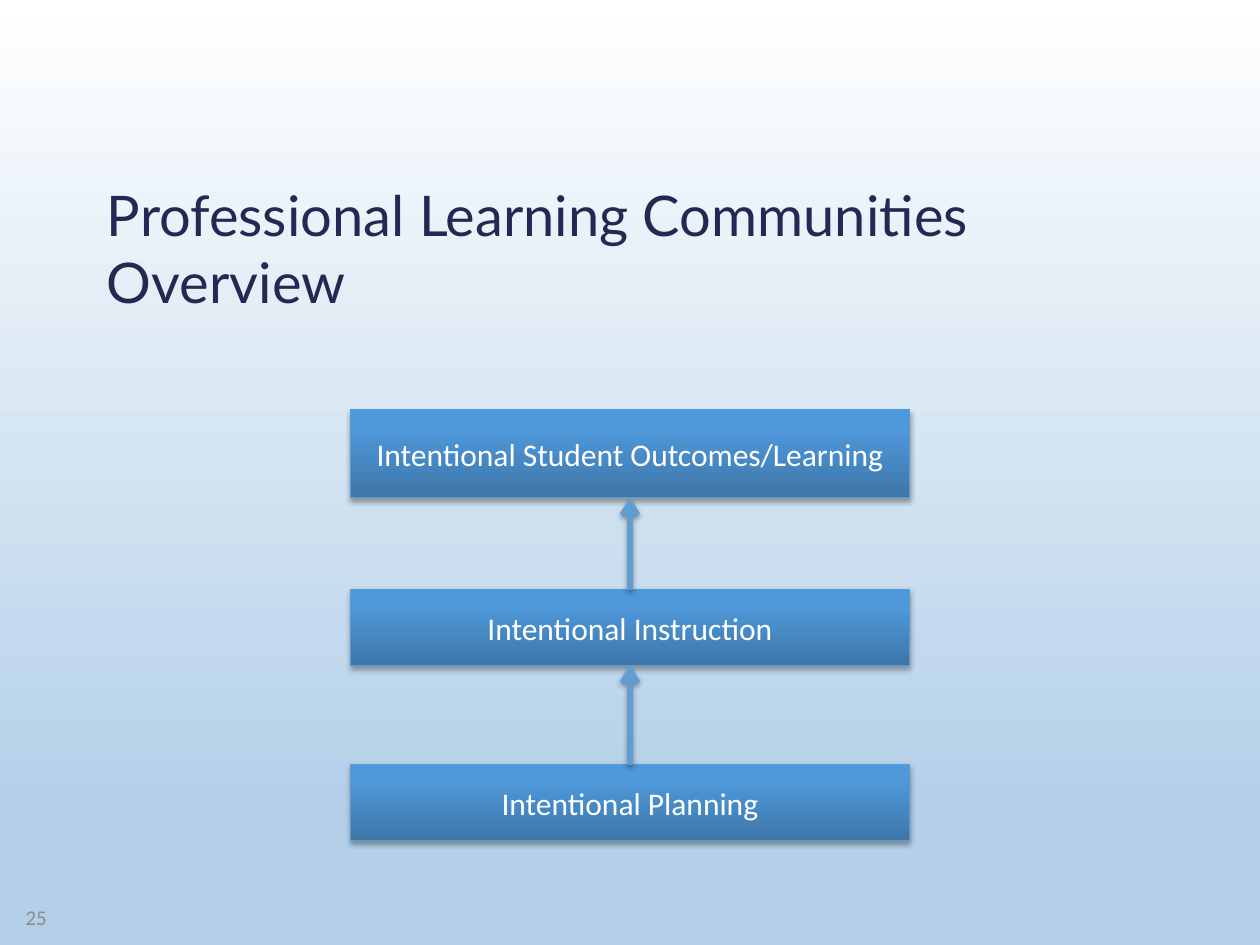
from lxml.etree import SubElement
from pptx import Presentation
from pptx.dml.color import RGBColor
from pptx.enum.shapes import MSO_CONNECTOR as Link, MSO_SHAPE as Preset
from pptx.enum.text import MSO_ANCHOR as Anchor, PP_ALIGN as Align
from pptx.oxml.ns import qn
from pptx.util import Inches, Pt

COLORS = {
    "title": "242852",
    "label": "FFFFFF",
    "number": "8C8C8C",
    "box_line": "5D9ACF",
    "arrow": "629DD1",
    "shadow": "000000",
}
SKY = [(0, "FFFFFF"), (85, "B4D0E9")]
BOX_BLUE = [(0, "3D76A8"), (80, "4F99DB"), (100, "4C9ADE")]
TOP, BOTTOM = 0, 2


def rgb(name):
    return RGBColor.from_string(COLORS[name])


def write(shape, text, font="Calibri", size=18, color="label",
          align=Align.CENTER, anchor=Anchor.MIDDLE):
    frame = shape.text_frame
    frame.word_wrap = True
    frame.vertical_anchor = anchor
    line = frame.paragraphs[0]
    line.alignment = align
    run = line.add_run()
    run.text = text
    run.font.name = font
    run.font.size = Pt(size)
    run.font.color.rgb = rgb(color)


def apply_gradient(fill, owner, stops, angle):
    """Set a linear gradient; the angle runs counter-clockwise."""
    fill.gradient()
    fill.gradient_angle = angle
    stop_list = next(owner.iter(qn("a:gsLst")))
    for old in list(stop_list):
        stop_list.remove(old)
    for percent, color in stops:
        stop = SubElement(stop_list, qn("a:gs"), pos=str(percent * 1000))
        SubElement(stop, qn("a:srgbClr"), val=color)


def add_shadow(effects, distance, opacity):
    shadow = SubElement(effects, qn("a:outerShdw"), blurRad=str(Pt(3.1)),
                        dist=str(Pt(distance)), dir="5400000", rotWithShape="0")
    color = SubElement(shadow, qn("a:srgbClr"), val=COLORS["shadow"])
    SubElement(color, qn("a:alpha"), val=str(opacity * 1000))


class Slide:
    def __init__(self, deck):
        self.slide = deck.slides.add_slide(deck.slide_layouts[6])
        self.shapes = self.slide.shapes
        apply_gradient(self.slide.background.fill, self.slide.element, SKY, 270)

    def text(self, place, text, **style):
        write(self.shapes.add_textbox(*map(Inches, place)), text, **style)

    def box(self, top, height, text):
        box = self.shapes.add_shape(Preset.RECTANGLE, Inches(2.78), Inches(top),
                                    Inches(4.44), Inches(height))
        apply_gradient(box.fill, box.element, BOX_BLUE, 90)
        box.line.color.rgb = rgb("box_line")
        box.line.width = Pt(0.75)
        box.shadow.inherit = False
        add_shadow(box.element.spPr.find(qn("a:effectLst")), 1.8, 35)
        write(box, text)
        return box

    def arrow(self, lower, upper):
        arrow = self.shapes.add_connector(Link.STRAIGHT, 0, 0, 0, 0)
        arrow.begin_connect(lower, TOP)
        arrow.end_connect(upper, BOTTOM)
        arrow.line.color.rgb = rgb("arrow")
        arrow.line.width = Pt(3.25)
        properties = arrow.element.spPr
        SubElement(properties.find(qn("a:ln")), qn("a:tailEnd"), type="arrow")
        add_shadow(SubElement(properties, qn("a:effectLst")), 1.6, 38)


def main():
    deck = Presentation()
    deck.slide_width, deck.slide_height = Inches(10), Inches(7.5)
    page = Slide(deck)

    # Title
    page.text((0.75, 0.94, 8.5, 1.61), "Professional Learning Communities Overview",
              font="Lato", size=32, color="title", align=Align.LEFT,
              anchor=Anchor.BOTTOM)

    # Steps from planning up to outcomes
    steps = [
        page.box(6.07, 0.6, "Intentional Planning"),
        page.box(4.68, 0.6, "Intentional Instruction"),
        page.box(3.25, 0.7, "Intentional Student Outcomes/Learning"),
    ]
    for lower, upper in zip(steps, steps[1:]):
        page.arrow(lower, upper)

    # Slide number
    page.text((0.03, 7.08, 0.44, 0.4), "25", size=12, color="number",
              align=Align.RIGHT)

    deck.save("out.pptx")


if __name__ == "__main__":
    main()
